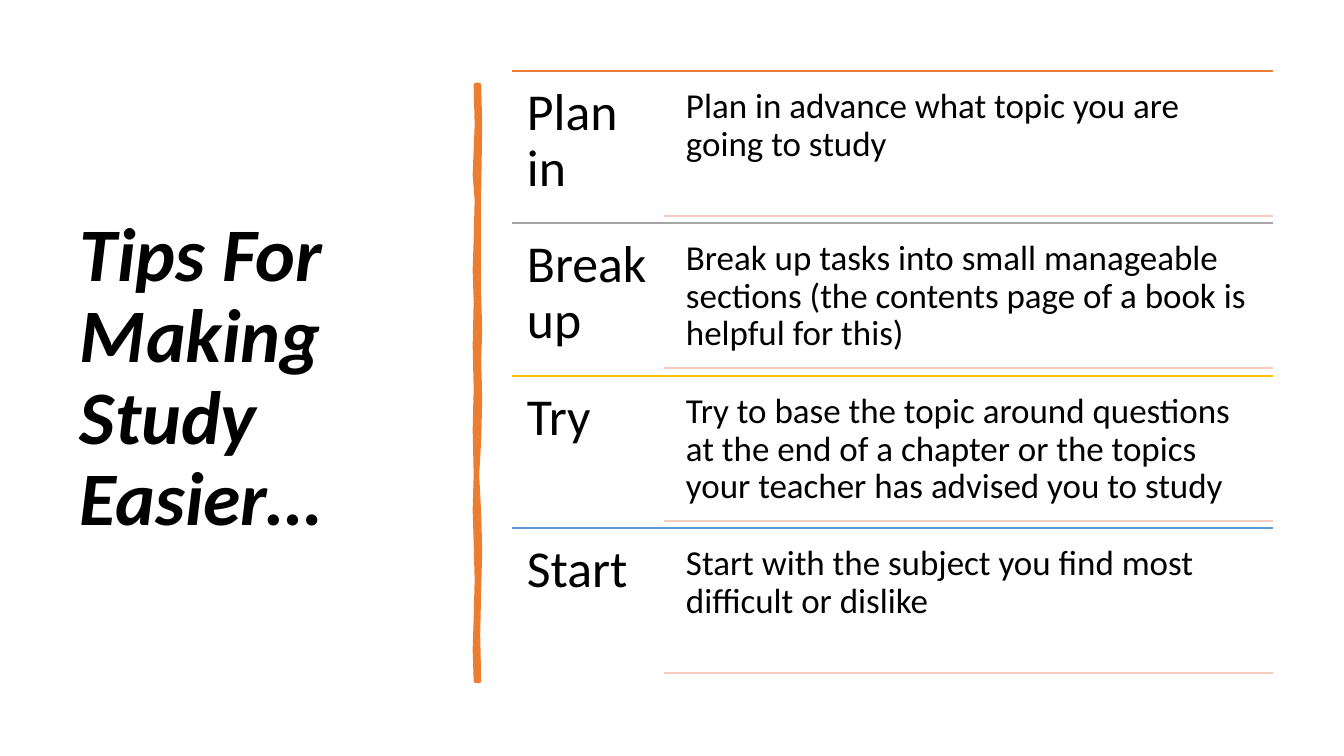
from lxml import etree
from pptx import Presentation
from pptx import util as u
from pptx.dml.color import RGBColor
from pptx.enum import shapes, text
from pptx.oxml.ns import qn

BLACK = RGBColor(0x00, 0x00, 0x00)
ORANGE = RGBColor(0xED, 0x7D, 0x31)
GRAY = RGBColor(0xA5, 0xA5, 0xA5)
GOLD = RGBColor(0xFF, 0xC0, 0x00)
BLUE = RGBColor(0x5B, 0x9B, 0xD5)
PALE = RGBColor(0xF6, 0xCC, 0xBE)

EMU_PER_PX = 914400 / 100.8
TABLE_LEFT, DETAIL_LINE_LEFT, DETAIL_LEFT, TABLE_RIGHT = 512, 664, 676, 1273
TABLE_TOP, TABLE_HEIGHT = 71, 610

TIPS = [
    ("Plan in", "Plan in advance what topic you are going to study", ORANGE),
    ("Break up", "Break up tasks into small manageable sections "
     "(the contents page of a book is helpful for this)", GRAY),
    ("Try", "Try to base the topic around questions at the end of a chapter "
     "or the topics your teacher has advised you to study", GOLD),
    ("Start", "Start with the subject you find most difficult or dislike", BLUE),
]

BRUSH_RIGHT = [(479, 85), (480, 125), (479, 190), (479, 296), (480, 330),
               (479, 359), (480, 400), (479, 440), (477, 475), (479, 514),
               (480, 550), (479, 589), (478, 635), (479, 681)]
BRUSH_LEFT = [(476, 681), (475, 650), (476, 618), (477, 580), (476, 543),
              (475, 510), (476, 475), (475, 430), (476, 389), (475, 345),
              (476, 302), (475, 270), (476, 240), (477, 200), (475, 175),
              (477, 125), (476, 85)]


def px(length):
    return u.Emu(round(length * EMU_PER_PX))


class SlideBuilder:
    font_name = "Calibri"
    line_spacing = 0.9

    def __init__(self, slide):
        self.slide = slide

    def text(self, words, left, top, width, height, size, inset_x, inset_y,
             anchor=text.MSO_ANCHOR.TOP, emphasis=False):
        shape = self.slide.shapes.add_textbox(px(left), px(top), px(width), px(height))
        frame = shape.text_frame
        frame.word_wrap = True
        frame.vertical_anchor = anchor
        frame.margin_left = frame.margin_right = px(inset_x)
        frame.margin_top = frame.margin_bottom = px(inset_y)
        paragraph = frame.paragraphs[0]
        paragraph.text = words
        paragraph.line_spacing = self.line_spacing
        font = paragraph.font
        font.name = self.font_name
        font.size = u.Pt(size)
        font.bold = font.italic = emphasis
        font.color.rgb = BLACK

    def rule(self, left, right, y, color):
        connector = self.slide.shapes.add_connector(
            shapes.MSO_CONNECTOR.STRAIGHT, px(left), px(y), px(right), px(y))
        connector.line.color.rgb = color
        connector.line.width = u.Pt(1)
        etree.SubElement(connector._element.spPr, qn("a:effectLst"))

    def brush_stroke(self, points, color):
        first, *rest = [(px(x), px(y)) for x, y in points]
        builder = self.slide.shapes.build_freeform(*first)
        builder.add_line_segments(rest, close=True)
        shape = builder.convert_to_shape()
        shape.shadow.inherit = False
        shape.fill.solid()
        shape.fill.fore_color.rgb = color
        shape.line.color.rgb = color
        shape.line.width = u.Pt(3.25)


def main():
    presentation = Presentation()
    presentation.slide_width = px(1344)
    presentation.slide_height = px(756)
    builder = SlideBuilder(presentation.slides.add_slide(presentation.slide_layouts[6]))

    builder.text("Tips For Making Study Easier…", 70, 71, 377, 616, 54, 10, 5,
                 anchor=text.MSO_ANCHOR.MIDDLE, emphasis=True)
    builder.brush_stroke(BRUSH_RIGHT + BRUSH_LEFT, ORANGE)

    for row, (label, detail, color) in enumerate(TIPS):
        top = TABLE_TOP + TABLE_HEIGHT * row // len(TIPS)
        builder.rule(TABLE_LEFT, TABLE_RIGHT, top, color)
        builder.text(label, TABLE_LEFT, top, DETAIL_LINE_LEFT - TABLE_LEFT, 152, 37, 15, 15)
        builder.text(detail, DETAIL_LEFT, top + 7, TABLE_RIGHT - DETAIL_LEFT, 138, 25, 10, 10)
        builder.rule(DETAIL_LINE_LEFT, TABLE_RIGHT, top + 145, PALE)

    presentation.save("out.pptx")


if __name__ == "__main__":
    main()
